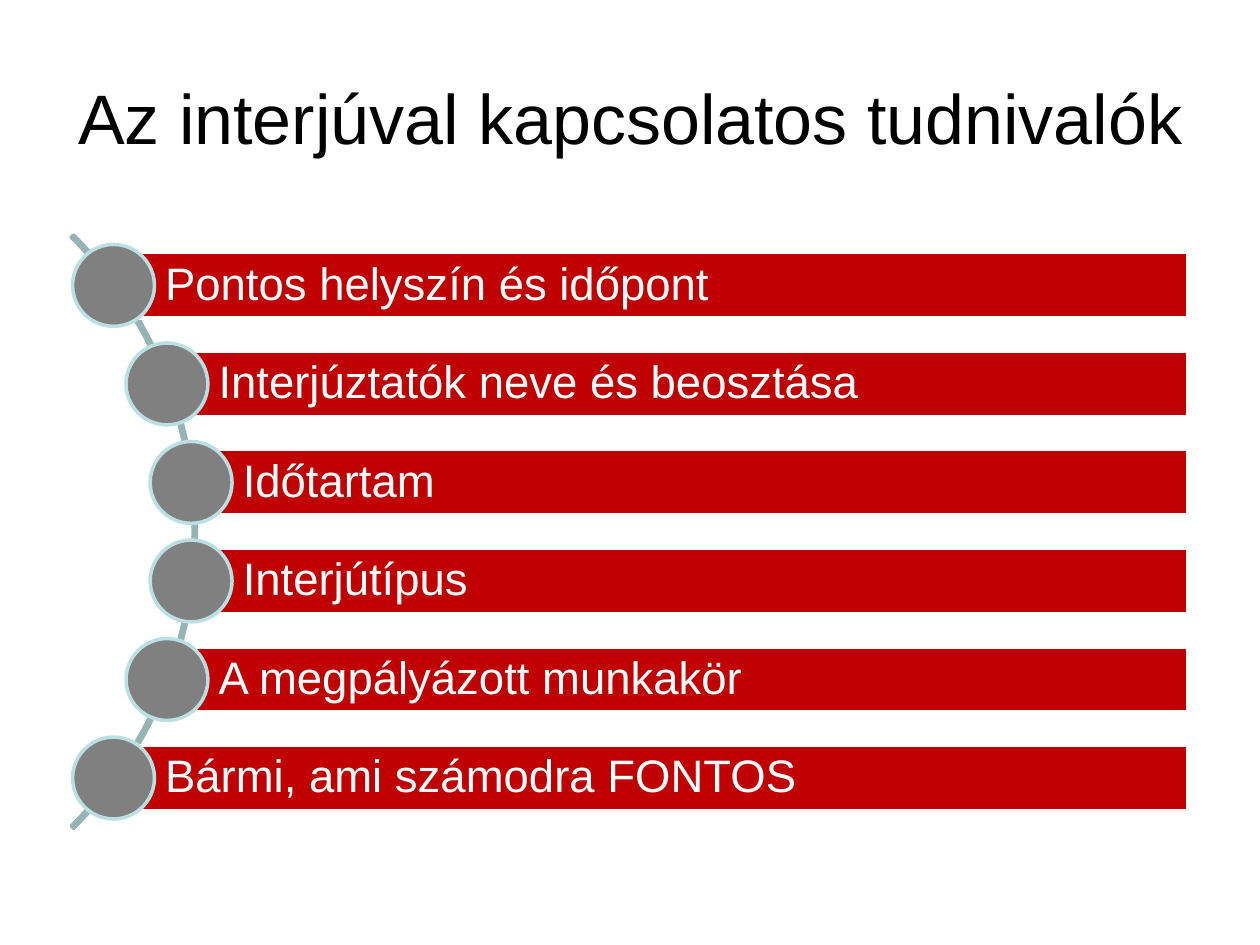
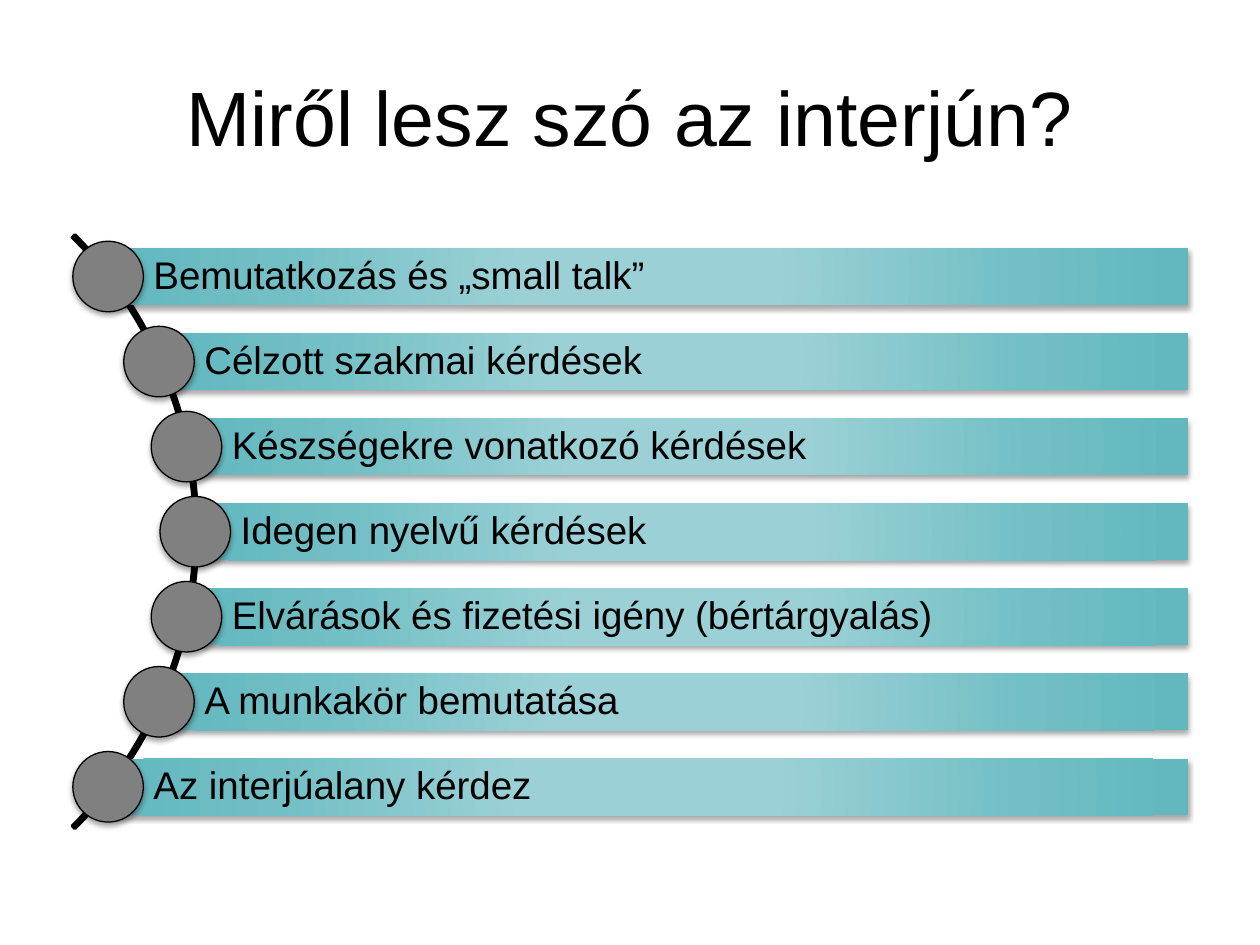
import pptx
import pptx.dml.color
import pptx.enum.shapes
import pptx.enum.text
import pptx.oxml
import pptx.util
from dataclasses import dataclass
from pptx.util import Inches
from lxml import etree

# Shared look
FONT = "Arial"
BLACK, WHITE, GREY = "000000", "FFFFFF", "808080"
RED, PALE_TEAL, ARC_TEAL = "C00000", "BBE0E3", "96B3B6"
TEAL_STOPS = [(0, "9BD1D6"), (23, "9BD1D6"), (69, "72BFC5"), (97, "63B8BF")]
DRAWING_NS = 'xmlns:a="http://schemas.openxmlformats.org/drawingml/2006/main"'
SHAPES = pptx.enum.shapes.MSO_SHAPE

# Shared geometry of the curved list, in inches
ARC_SIZE = 6.66
DOT_ORBIT = 3.31
BAR_RIGHT = 9.43


@dataclass
class ListStyle:
    span: float          # distance between first and last row centres
    bar_height: float
    dot_size: float
    text_inset: float
    edge_inset: float
    text_size: int
    text_color: str
    arc_color: str
    dot_line: tuple
    bar_fill: object     # a hex string or gradient stops
    bar_line: tuple = None
    shadow: bool = False


RED_STYLE = ListStyle(3.91, 0.52, 0.65, 0.41, 0.07, 26, WHITE, ARC_TEAL,
                      (PALE_TEAL, 2), RED, (WHITE, 2))
TEAL_STYLE = ListStyle(4.05, 0.45, 0.56, 0.36, 0.06, 22, BLACK, BLACK,
                       (BLACK, 0.75), TEAL_STOPS, shadow=True)


def color(hex_string):
    return pptx.dml.color.RGBColor.from_string(hex_string)


def add_span(para, text, size, hex_string):
    span = para.add_run()
    span.text = text
    span.font.name = FONT
    span.font.size = pptx.util.Pt(size)
    span.font.color.rgb = color(hex_string)


def set_gradient(shape, stops):
    """Radial gradient spreading from the middle of the shape."""
    shape.fill.background()
    stop_xml = "".join(
        f'<a:gs pos="{pos * 1000}"><a:srgbClr val="{value}"/></a:gs>'
        for pos, value in stops)
    gradient = pptx.oxml.parse_xml(
        f'<a:gradFill {DRAWING_NS} rotWithShape="1"><a:gsLst>{stop_xml}</a:gsLst>'
        '<a:path path="circle"><a:fillToRect l="50000" t="50000" r="50000" b="50000"/>'
        '</a:path></a:gradFill>')
    properties = shape.element.spPr
    no_fill = properties.find("{*}noFill")
    properties.replace(no_fill, gradient)


def set_shadow(shape):
    """Soft shadow straight below the shape."""
    effects = shape.element.spPr.find("{*}effectLst")
    effects.append(etree.fromstring(
        f'<a:outerShdw {DRAWING_NS} blurRad="39400" dist="22900" dir="5400000" '
        'rotWithShape="0"><a:srgbClr val="000000"><a:alpha val="35000"/>'
        '</a:srgbClr></a:outerShdw>'))


def add_figure(page, kind, left, top, width, height, fill=None, line=None, shadow=False):
    shape = page.shapes.add_shape(
        kind, Inches(left), Inches(top), Inches(width), Inches(height))
    if fill is None:
        shape.fill.background()
    elif isinstance(fill, str):
        shape.fill.solid()
        shape.fill.fore_color.rgb = color(fill)
    else:
        set_gradient(shape, fill)
    if line:
        shape.line.color.rgb = color(line[0])
        shape.line.width = pptx.util.Pt(line[1])
    else:
        shape.line.fill.background()
    shape.shadow.inherit = False
    if shadow:
        set_shadow(shape)
    return shape


def add_title(page, text, size, top):
    title = page.shapes.title
    title.left, title.top = Inches(0.5), Inches(top)
    title.width, title.height = Inches(9), Inches(1.25)
    frame = title.text_frame
    frame.word_wrap = True
    frame.auto_size = pptx.enum.text.MSO_AUTO_SIZE.NONE
    frame.vertical_anchor = pptx.enum.text.MSO_ANCHOR.MIDDLE
    para = frame.paragraphs[0]
    para.alignment = pptx.enum.text.PP_ALIGN.CENTER
    add_span(para, text, size, BLACK)


def add_bar(page, text, left, middle, style):
    bar = add_figure(page, SHAPES.RECTANGLE, left, middle - style.bar_height / 2,
                     BAR_RIGHT - left, style.bar_height,
                     style.bar_fill, style.bar_line, style.shadow)
    frame = bar.text_frame
    frame.word_wrap = True
    frame.vertical_anchor = pptx.enum.text.MSO_ANCHOR.MIDDLE
    frame.margin_left = Inches(style.text_inset)
    frame.margin_top = frame.margin_right = frame.margin_bottom = Inches(style.edge_inset)
    para = frame.paragraphs[0]
    para.alignment = pptx.enum.text.PP_ALIGN.LEFT
    para.line_spacing = 0.9
    add_span(para, text, style.text_size, style.text_color)


def add_curved_list(page, items, style, center_x, center_y):
    """Bars whose dots ride on an arc around the given centre."""
    arc = add_figure(page, SHAPES.BLOCK_ARC, center_x - ARC_SIZE / 2,
                     center_y - ARC_SIZE / 2, ARC_SIZE, ARC_SIZE,
                     line=(style.arc_color, 2))
    for index, value in enumerate((189, 27, 0.004)):
        arc.adjustments[index] = value

    pitch = style.span / (len(items) - 1)
    for row, text in enumerate(items):
        offset = row * pitch - style.span / 2
        dot_x = center_x + (DOT_ORBIT ** 2 - offset ** 2) ** 0.5
        dot_y = center_y + offset
        add_bar(page, text, dot_x, dot_y, style)
        add_figure(page, SHAPES.OVAL, dot_x - style.dot_size / 2,
                   dot_y - style.dot_size / 2, style.dot_size, style.dot_size,
                   GREY, style.dot_line, style.shadow)


def add_list_page(deck, title, title_size, title_top, items, style, center_x):
    page = deck.slides.add_slide(deck.slide_layouts[5])
    add_title(page, title, title_size, title_top)
    add_curved_list(page, items, style, center_x, 4.22)


def main():
    deck = pptx.Presentation()
    deck.slide_width, deck.slide_height = Inches(10), Inches(7.5)

    # Interview facts
    add_list_page(deck, "Az interjúval kapcsolatos tudnivalók", 40, 0.3, [
        "Pontos helyszín és időpont",
        "Interjúztatók neve és beosztása",
        "Időtartam",
        "Interjútípus",
        "A megpályázott munkakör",
        "Bármi, ami számodra FONTOS",
    ], RED_STYLE, -1.77)

    # Interview topics
    add_list_page(deck, "Miről lesz szó az interjún?", 44, 0.29, [
        "Bemutatkozás és „small talk”",
        "Célzott szakmai kérdések",
        "Készségekre vonatkozó kérdések",
        "Idegen nyelvű kérdések",
        "Elvárások és fizetési igény (bértárgyalás)",
        "A munkakör bemutatása",
        "Az interjúalany kérdez",
    ], TEAL_STYLE, -1.76)

    deck.save("out.pptx")


if __name__ == "__main__":
    main()
